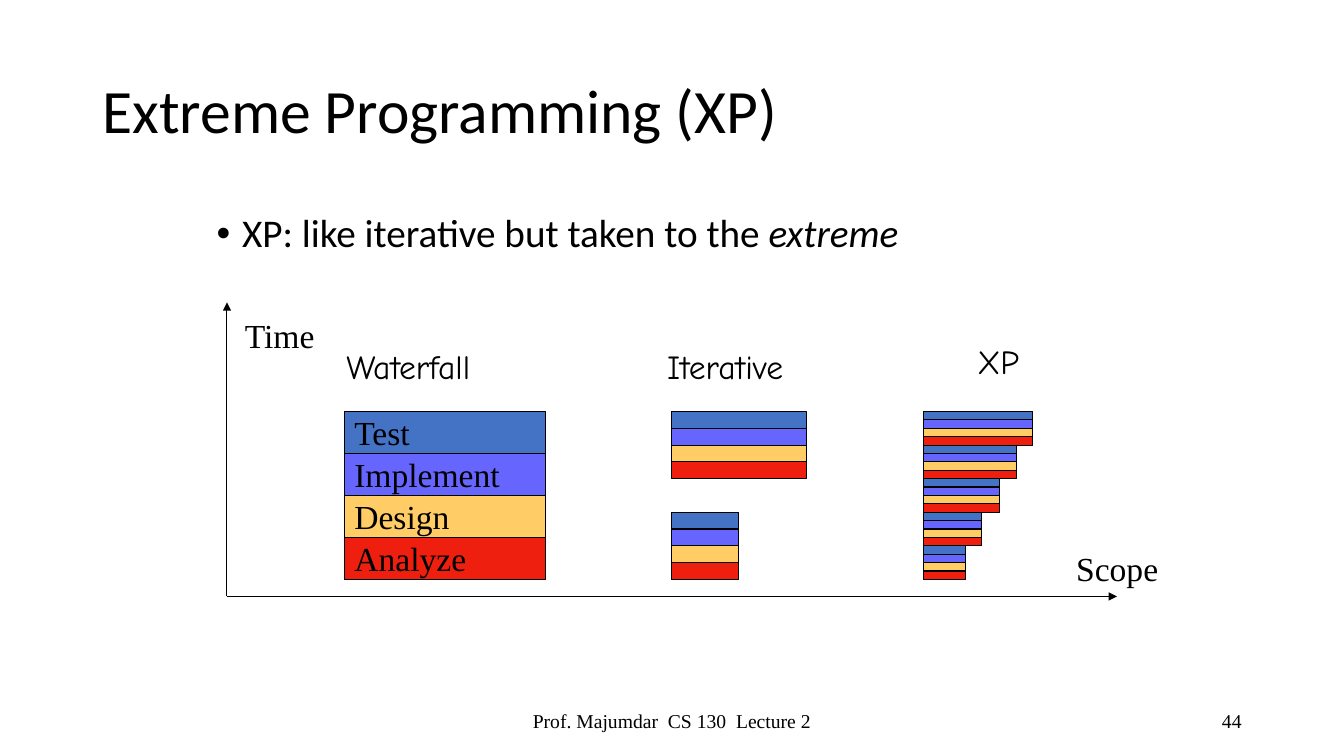
from lxml.etree import SubElement
from pptx import Presentation
from pptx.dml.color import RGBColor
from pptx.enum.shapes import MSO_CONNECTOR, MSO_SHAPE
from pptx.enum.text import MSO_ANCHOR, PP_ALIGN
from pptx.oxml.ns import qn
from pptx.util import Cm, Pt

# Content: lengths in centimetres, text boxes as (left, top, width, height)
TITLE = "Extreme Programming (XP)"
POINT = [("XP: like iterative but taken to the ", False), ("extreme", True)]
FOOTER = "Prof. Majumdar  CS 130  Lecture 2"
PAGE_NUMBER = "44"
PHASES = [("Test", "4472C4"), ("Implement", "6666FF"),
          ("Design", "FFCC66"), ("Analyze", "EF1F0F")]
AXIS_LABELS = [("Time", (5.92, 7.82, 2.4, 1.27)),
               ("Scope", (26.87, 13.67, 2.7, 1.27))]
MODEL_LABELS = [("Waterfall", (8.48, 8.59, 4.42, 1.27)),
                ("Iterative", (16.56, 8.59, 4.19, 1.27)),
                ("XP", (24.38, 8.46, 1.57, 1.27))]
# Each model: left edge, block widths from the top, gap in block heights, labelled
MODELS = [(8.68, [5.08], 0, True),
          (16.93, [3.39, 1.69], 0.5, False),
          (23.28, [2.75, 2.33, 1.9, 1.46, 1.06], 0, False)]
CHART_TOP, CHART_HEIGHT = 10.37, 4.23
ORIGIN, TIME_END, SCOPE_END = (5.72, 15.03), (5.72, 7.62), (28.15, 15.03)

THEME = {
    "ink": "000000", "line": 0.75,
    "sans": "Calibri", "serif": "Times New Roman", "hand": "Comic Neue",
    "title": 44, "body": 28, "label": 24, "footer": 14,
}

deck = Presentation()
deck.slide_width, deck.slide_height = Cm(33.87), Cm(19.05)
page = deck.slides.add_slide(deck.slide_layouts[6])


def write(box, text, font, size, anchor=MSO_ANCHOR.TOP, align=PP_ALIGN.LEFT,
          spacing=None, before=None):
    """Fill a box with one paragraph of a string or (text, italic) spans."""
    frame = box.text_frame
    frame.word_wrap = True
    frame.vertical_anchor = anchor
    para = frame.paragraphs[0]
    para.alignment = align
    if spacing:
        para.line_spacing = spacing
    if before:
        para.space_before = Pt(before)
    for words, italic in [(text, False)] if isinstance(text, str) else text:
        span = para.add_run()
        span.text = words
        span.font.name = THEME[font]
        span.font.size = Pt(THEME[size])
        span.font.italic = italic
        span.font.color.rgb = RGBColor.from_string(THEME["ink"])
    return para


def text_box(place, text, font, size, **layout):
    box = page.shapes.add_textbox(*map(Cm, place))
    return write(box, text, font, size, **layout)


def add_bullet(para, indent):
    properties = para._p.get_or_add_pPr()
    properties.set("marL", str(Cm(indent)))
    properties.set("indent", str(-Cm(indent)))
    SubElement(properties, qn("a:buFont"), typeface="Arial")
    SubElement(properties, qn("a:buChar"), char="•")


def set_outline(line):
    line.color.rgb = RGBColor.from_string(THEME["ink"])
    line.width = Pt(THEME["line"])


def add_axis(start, end):
    axis = page.shapes.add_connector(MSO_CONNECTOR.STRAIGHT,
                                     *map(Cm, start + end))
    set_outline(axis.line)
    SubElement(axis.line._get_or_add_ln(), qn("a:tailEnd"), type="triangle")
    SubElement(axis._element.spPr, qn("a:effectLst"))


def add_block(left, top, width, height, labelled):
    """Stack the four phases as equal bands."""
    band_height = height / len(PHASES)
    for row, (phase, colour) in enumerate(PHASES):
        band = page.shapes.add_shape(
            MSO_SHAPE.RECTANGLE, Cm(left), Cm(top + row * band_height),
            Cm(width), Cm(band_height))
        band.shadow.inherit = False
        band.fill.solid()
        band.fill.fore_color.rgb = RGBColor.from_string(colour)
        set_outline(band.line)
        if labelled:
            write(band, phase, "serif", "label", anchor=MSO_ANCHOR.MIDDLE)


# Title, bullet and footer
text_box((2.33, 1.01, 29.21, 3.68), TITLE, "sans", "title",
         anchor=MSO_ANCHOR.MIDDLE, spacing=0.9)
point = text_box((5.21, 5.26, 24.13, 12.27), POINT, "sans", "body",
                 spacing=0.9, before=10)
add_bullet(point, 0.64)
text_box((11.22, 17.66, 11.43, 1.01), FOOTER, "serif", "footer",
         anchor=MSO_ANCHOR.MIDDLE, align=PP_ALIGN.CENTER)
text_box((23.92, 17.66, 7.62, 1.01), PAGE_NUMBER, "serif", "footer",
         anchor=MSO_ANCHOR.MIDDLE, align=PP_ALIGN.RIGHT)

# Axes
for axis_end in (SCOPE_END, TIME_END):
    add_axis(ORIGIN, axis_end)
for label, place in AXIS_LABELS:
    text_box(place, label, "serif", "label")

# Process models: the blocks and gaps of each fill the same height
for left, widths, gap, labelled in MODELS:
    height = CHART_HEIGHT / (len(widths) + gap * (len(widths) - 1))
    for index, width in enumerate(widths):
        top = CHART_TOP + index * height * (1 + gap)
        add_block(left, top, width, height, labelled)
for label, place in MODEL_LABELS:
    text_box(place, label, "hand", "label")

deck.save("out.pptx")
